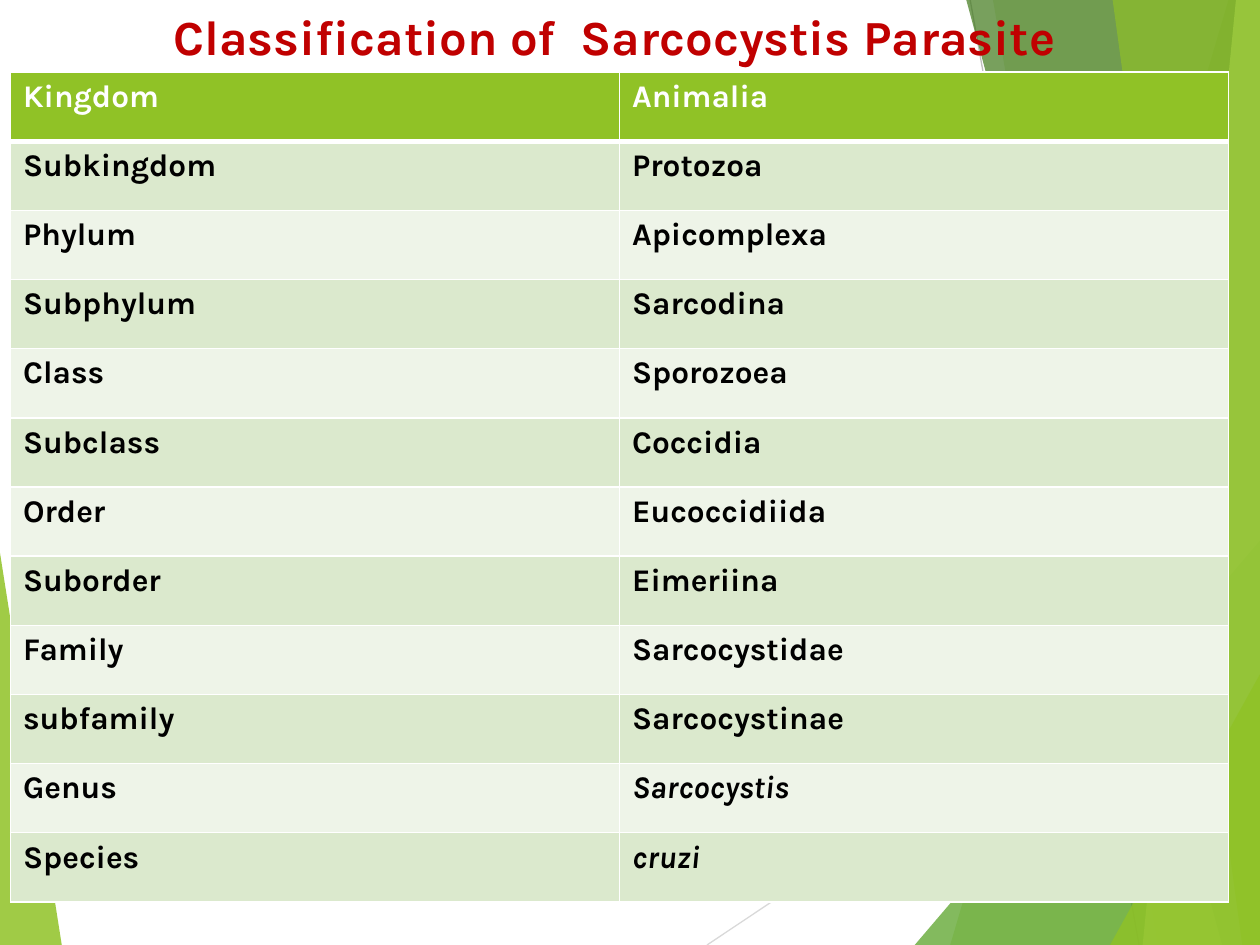
from dataclasses import dataclass

from lxml.etree import SubElement
from pptx import Presentation
from pptx.dml.color import RGBColor
from pptx.enum.shapes import MSO_CONNECTOR
from pptx.enum.text import MSO_AUTO_SIZE, PP_ALIGN
from pptx.oxml.ns import qn
from pptx.util import Pt


@dataclass(frozen=True)
class Theme:
    font: str = "Karla"
    title_size: int = 28
    cell_size: int = 18
    title: str = "C00000"
    green: str = "90C226"
    leaf: str = "54A021"
    forest: str = "3F7819"
    lime: str = "C0E474"
    band_dark: str = "DBE9CD"
    band_light: str = "EEF4E8"
    white: str = "FFFFFF"
    black: str = "000000"
    ray_light: str = "D9D9D9"
    ray_dark: str = "BFBFBF"


THEME = Theme()
WIDTH, HEIGHT = 720, 540

RANKS = [
    ("Kingdom", "Animalia"),
    ("Subkingdom", "Protozoa"),
    ("Phylum", "Apicomplexa"),
    ("Subphylum", "Sarcodina"),
    ("Class", "Sporozoea"),
    ("Subclass", "Coccidia"),
    ("Order", "Eucoccidiida"),
    ("Suborder", "Eimeriina"),
    ("Family", "Sarcocystidae"),
    ("subfamily", "Sarcocystinae"),
    ("Genus", "Sarcocystis"),
    ("Species", "cruzi"),
]
ITALIC_NAMES = {"Sarcocystis", "cruzi"}


def add_facet(slide, points, color, opacity):
    """Draw a translucent polygon; opacity is in percent."""
    start, *rest = [(Pt(x), Pt(y)) for x, y in points]
    builder = slide.shapes.build_freeform(*start)
    builder.add_line_segments(rest, close=True)
    facet = builder.convert_to_shape()
    facet.shadow.inherit = False
    facet.line.fill.background()
    facet.fill.solid()
    facet.fill.fore_color.rgb = RGBColor.from_string(color)
    srgb = facet.fill._xPr.find(".//" + qn("a:srgbClr"))
    SubElement(srgb, qn("a:alpha"), val=str(opacity * 1000))


def add_band(slide, top_x, bottom_x, color, opacity):
    """Fill from a slanted edge to the right side of the slide."""
    points = [(top_x, 0), (bottom_x, HEIGHT), (WIDTH, HEIGHT), (WIDTH, 0)]
    add_facet(slide, points, color, opacity)


def add_corner(slide, bottom_x, right_y, color, opacity):
    """Fill the lower right corner below a slanted edge."""
    points = [(bottom_x, HEIGHT), (WIDTH, right_y), (WIDTH, HEIGHT)]
    add_facet(slide, points, color, opacity)


def add_ray(slide, start, end, color):
    ray = slide.shapes.add_connector(
        MSO_CONNECTOR.STRAIGHT, *[Pt(value) for value in (*start, *end)])
    ray.line.color.rgb = RGBColor.from_string(color)
    ray.line.width = Pt(0.75)
    SubElement(ray._element.spPr, qn("a:effectLst"))


def style_text(paragraph, size, color, italic=None):
    for run in paragraph.runs:
        run.font.name = THEME.font
        run.font.size = Pt(size)
        run.font.bold = True
        run.font.italic = italic
        run.font.color.rgb = RGBColor.from_string(color)


def add_title(slide, text):
    title = slide.shapes.add_textbox(0, 0, Pt(702), Pt(41.2))
    frame = title.text_frame
    frame.word_wrap = True
    frame.auto_size = MSO_AUTO_SIZE.SHAPE_TO_FIT_TEXT
    frame.text = text
    frame.paragraphs[0].alignment = PP_ALIGN.CENTER
    style_text(frame.paragraphs[0], THEME.title_size, THEME.title)


def set_borders(cell, top, bottom):
    """Give a cell white borders; widths are in points."""
    properties = cell._tc.get_or_add_tcPr()
    for side, width in (("L", 1), ("R", 1), ("T", top), ("B", bottom)):
        border = SubElement(properties, qn(f"a:ln{side}"), w=str(Pt(width)))
        fill = SubElement(border, qn("a:solidFill"))
        SubElement(fill, qn("a:srgbClr"), val=THEME.white)


def add_rank_table(slide, ranks):
    row_height, column_width = 39.54, 348
    table = slide.shapes.add_table(
        len(ranks), 2, Pt(6), Pt(41.2),
        Pt(2 * column_width), Pt(row_height * len(ranks))).table
    for column in table.columns:
        column.width = Pt(column_width)
    for index, names in enumerate(ranks):
        table.rows[index].height = Pt(row_height)
        header = index == 0
        band = THEME.band_dark if index % 2 else THEME.band_light
        for cell, name in zip(table.rows[index].cells, names):
            # Borders come before the fill in the cell properties
            set_borders(cell, 3 if index == 1 else 1, 3 if header else 1)
            cell.fill.solid()
            cell.fill.fore_color.rgb = RGBColor.from_string(
                THEME.green if header else band)
            cell.text_frame.text = name
            style_text(cell.text_frame.paragraphs[0], THEME.cell_size,
                       THEME.white if header else THEME.black,
                       name in ITALIC_NAMES)


def add_backdrop(slide):
    # Left wedge and thin rays
    add_facet(slide, [(0, 316), (35.3, HEIGHT), (0, HEIGHT)], THEME.green, 85)
    add_ray(slide, (404, HEIGHT), (WIDTH, 329), THEME.ray_light)
    add_ray(slide, (554.4, 0), (650.9, HEIGHT), THEME.ray_dark)
    # Overlapping facets on the right
    add_band(slide, 702, 543, THEME.green, 30)
    add_band(slide, 567.4, 661.7, THEME.green, 20)
    add_corner(slide, 522.7, 308.9, THEME.leaf, 72)
    add_band(slide, 552.2, 698.4, THEME.forest, 70)
    add_band(slide, 706.3, 653, THEME.lime, 70)
    add_band(slide, 635.8, 709.9, THEME.green, 65)
    add_corner(slide, 634.3, 385.2, THEME.green, 80)


def main():
    presentation = Presentation()
    presentation.slide_width, presentation.slide_height = Pt(WIDTH), Pt(HEIGHT)
    slide = presentation.slides.add_slide(presentation.slide_layouts[6])
    add_backdrop(slide)
    add_title(slide, "Classification of  Sarcocystis Parasite")
    add_rank_table(slide, RANKS)
    presentation.save("out.pptx")


if __name__ == "__main__":
    main()
